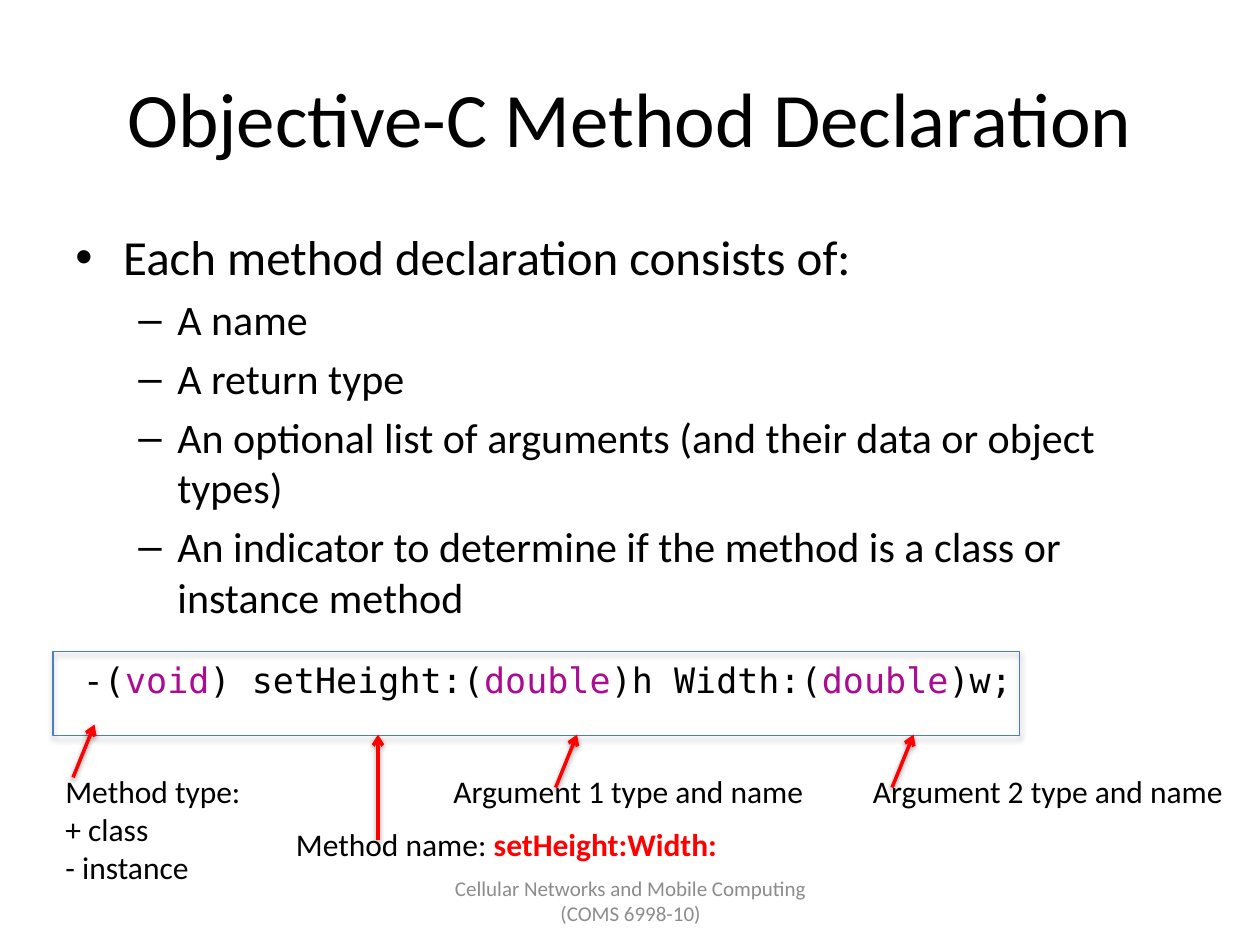
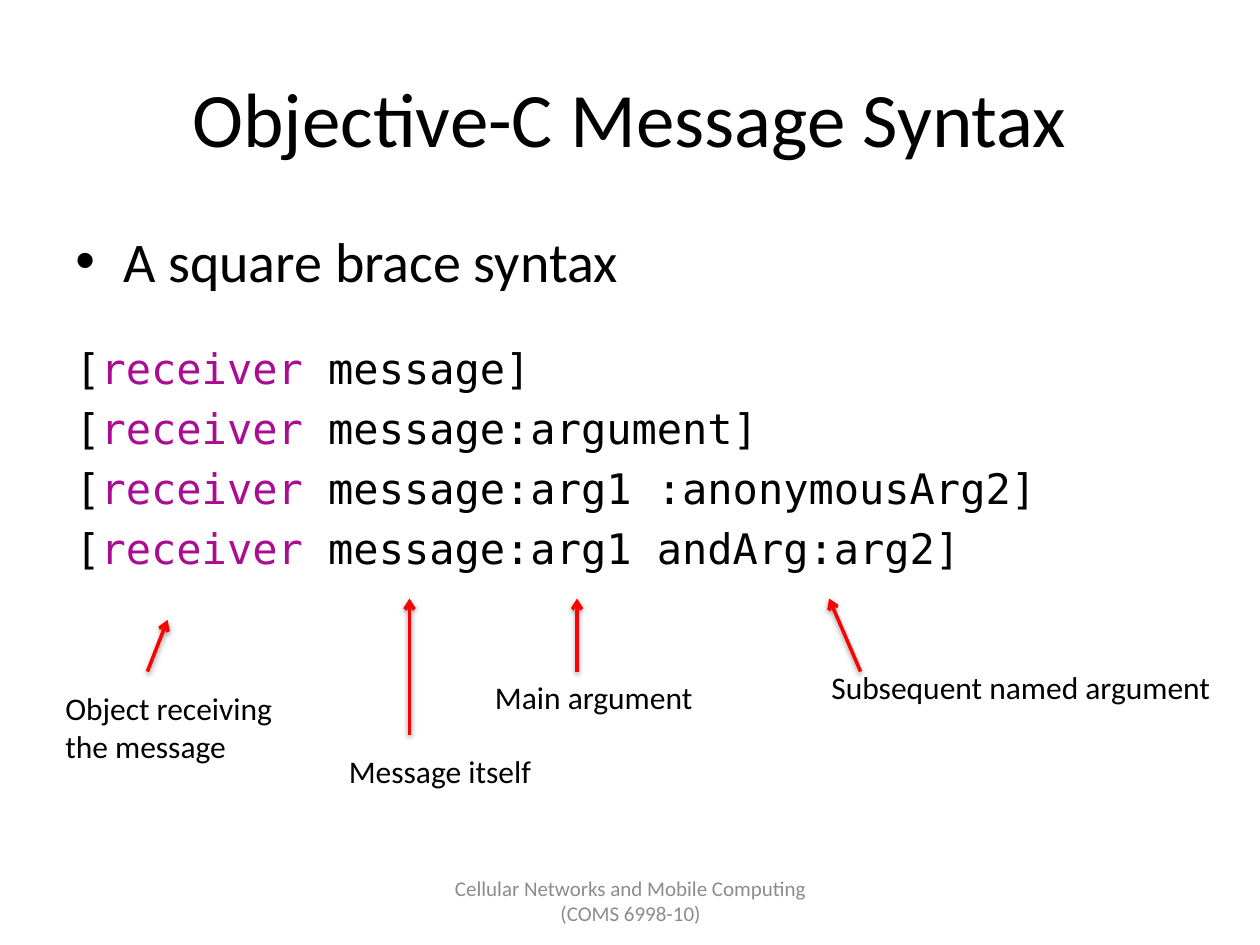
from lxml import etree
from pptx import Presentation
from pptx.dml.color import RGBColor
from pptx.enum.shapes import MSO_CONNECTOR, MSO_SHAPE
from pptx.enum.text import MSO_ANCHOR, PP_ALIGN
from pptx.oxml.ns import qn
from pptx.util import Inches, Pt

BLACK = RGBColor(0x00, 0x00, 0x00)
RED = RGBColor(0xFF, 0x00, 0x00)
PURPLE = RGBColor(0xAA, 0x0D, 0x91)
GREY = RGBColor(0x8C, 0x8C, 0x8C)
BLUE = RGBColor(0x4B, 0x7E, 0xBC)
SANS, MONO = "Calibri", "DejaVu Sans Mono"
LEFT, CENTER = PP_ALIGN.LEFT, PP_ALIGN.CENTER
TOP, MIDDLE = MSO_ANCHOR.TOP, MSO_ANCHOR.MIDDLE
STRAIGHT, RECT = MSO_CONNECTOR.STRAIGHT, MSO_SHAPE.RECTANGLE
TITLE_ONLY = 5

TITLE = (0.5, 0.3, 9, 1.25)
BODY = (0.5, 1.75, 9, 4.95)
FOOTER = (3.42, 6.95, 3.17, 0.4)
FOOT_TEXT = "Cellular Networks and Mobile Computing (COMS 6998-10)"


def inches(box):
    return [Inches(n) for n in box]


def write(para, text, size=18, font=SANS, color=BLACK, mark=PURPLE,
          bold=False, align=LEFT, before=0, indent=(0, 0), bullet=None):
    """Fill a paragraph; parts between bars take the mark colour."""
    para.alignment = align
    para.space_before = Pt(before)
    props = para._p.get_or_add_pPr()
    props.set("marL", str(Inches(indent[0])))
    props.set("indent", str(Inches(indent[1])))
    if bullet:
        face = etree.SubElement(props, qn("a:buFont"))
        face.set("typeface", "Arial")
        etree.SubElement(props, qn("a:buChar")).set("char", bullet)
    else:
        etree.SubElement(props, qn("a:buNone"))
    for i, part in enumerate(text.split("|")):
        if part:
            run = para.add_run()
            run.text = part
            run.font.size, run.font.name = Pt(size), font
            run.font.bold = bold and i % 2 == 1
            run.font.color.rgb = mark if i % 2 else color


def add_text(slide, box, lines, wrap=True, anchor=TOP, **style):
    """Add a text box; each line is a text or a (text, style) pair."""
    frame = slide.shapes.add_textbox(*inches(box)).text_frame
    frame.word_wrap = wrap
    frame.vertical_anchor = anchor
    for i, line in enumerate(lines):
        text, own = (line, {}) if isinstance(line, str) else line
        para = frame.add_paragraph() if i else frame.paragraphs[0]
        write(para, text, **{**style, **own})


def add_shadow(props, alpha, dist):
    for old in props.findall(qn("a:effectLst")):
        props.remove(old)
    effects = etree.SubElement(props, qn("a:effectLst"))
    shade = etree.SubElement(
        effects, qn("a:outerShdw"), blurRad=str(Pt(3.1)),
        dist=str(Pt(dist)), dir="5400000", rotWithShape="0")
    color = etree.SubElement(shade, qn("a:srgbClr"), val=str(BLACK))
    etree.SubElement(color, qn("a:alpha"), val=str(alpha * 1000))


def add_arrow(slide, start, end):
    arrow = slide.shapes.add_connector(STRAIGHT, *inches(start + end))
    arrow.line.color.rgb = RED
    arrow.line.width = Pt(2)
    line = arrow.line._get_or_add_ln()
    etree.SubElement(line, qn("a:tailEnd"), type="arrow")
    add_shadow(arrow._element.spPr, 38, 1.6)


def add_label(slide, box, lines, start, end, **style):
    """Add a note and the arrow that ties it to the code."""
    add_text(slide, box, lines, wrap=False, **style)
    add_arrow(slide, start, end)


def add_frame(slide, box):
    frame = slide.shapes.add_shape(RECT, *inches(box))
    frame.fill.background()
    frame.line.color.rgb = BLUE
    frame.line.width = Pt(0.75)
    add_shadow(frame._element.spPr, 35, 1.8)


def add_slide(deck, title):
    slide = deck.slides.add_slide(deck.slide_layouts[TITLE_ONLY])
    head = slide.shapes.title
    head.left, head.top, head.width, head.height = inches(TITLE)
    head.text_frame.vertical_anchor = MIDDLE
    write(head.text_frame.paragraphs[0], title, size=44, align=CENTER)
    add_text(slide, FOOTER, [FOOT_TEXT], anchor=MIDDLE,
             size=12, color=GREY, align=CENTER)
    return slide


def method_slide(deck):
    slide = add_slide(deck, "Objective-C Method Declaration")
    point = dict(size=28, indent=(0.38, -0.38), bullet="•")
    dash = dict(size=24, before=4.8, indent=(0.81, -0.31), bullet="–")
    code = dict(size=20, font=MONO, before=21, indent=(0.06, 0))
    parts = ["A name", "A return type",
             "An optional list of arguments (and their data or object types)",
             "An indicator to determine if the method is a class or "
             "instance method"]
    add_text(slide, BODY, [
        ("Each method declaration consists of:", point),
        *((part, dash) for part in parts),
        ("-(|void|) setHeight:(|double|)h Width:(|double|)w;", code)])
    add_frame(slide, (0.42, 5.17, 7.67, 0.67))
    add_label(slide, (0.42, 6.08, 1.61, 1.01),
              ["Method type:", "+ class", "- instance"],
              (0.58, 6.17), (0.75, 5.75))
    for i, (left, tip) in enumerate([(3.5, 4.58), (6.83, 7.25)], 1):
        add_label(slide, (left, 6.08, 3.01, 0.4),
                  [f"Argument {i} type and name"],
                  (tip - 0.17, 6.25), (tip, 5.83))
    add_label(slide, (2.25, 6.5, 3.58, 0.4),
              ["Method name: |setHeight:Width:"],
              (3, 6.67), (3, 5.83), mark=RED, bold=True)


def message_slide(deck):
    slide = add_slide(deck, "Objective-C Message Syntax")
    point = dict(size=32, indent=(0.38, -0.38), bullet="•")
    calls = ["message]", "message:argument]",
             "message:arg1 :anonymousArg2]", "message:arg1 andArg:arg2]"]
    code = [("[|receiver |" + call,
             dict(size=24, font=MONO, before=5.6 if i else 27.5))
            for i, call in enumerate(calls)]
    add_text(slide, BODY, [("A square brace syntax", point), *code])
    add_label(slide, (0.42, 5.42, 1.86, 0.71),
              ["Object receiving", "the message"],
              (1.17, 5.33), (1.33, 4.92))
    add_label(slide, (3.83, 5.33, 1.79, 0.4), ["Main argument"],
              (4.58, 5.33), (4.58, 4.75))
    add_label(slide, (6.5, 5.25, 3.25, 0.4), ["Subsequent named argument"],
              (6.83, 5.33), (6.58, 4.75))
    add_label(slide, (2.67, 5.92, 1.67, 0.4), ["Message itself"],
              (3.25, 5.83), (3.25, 4.75))


def main():
    deck = Presentation()
    deck.slide_width, deck.slide_height = Inches(10), Inches(7.5)
    method_slide(deck)
    message_slide(deck)
    deck.save("out.pptx")


if __name__ == "__main__":
    main()
